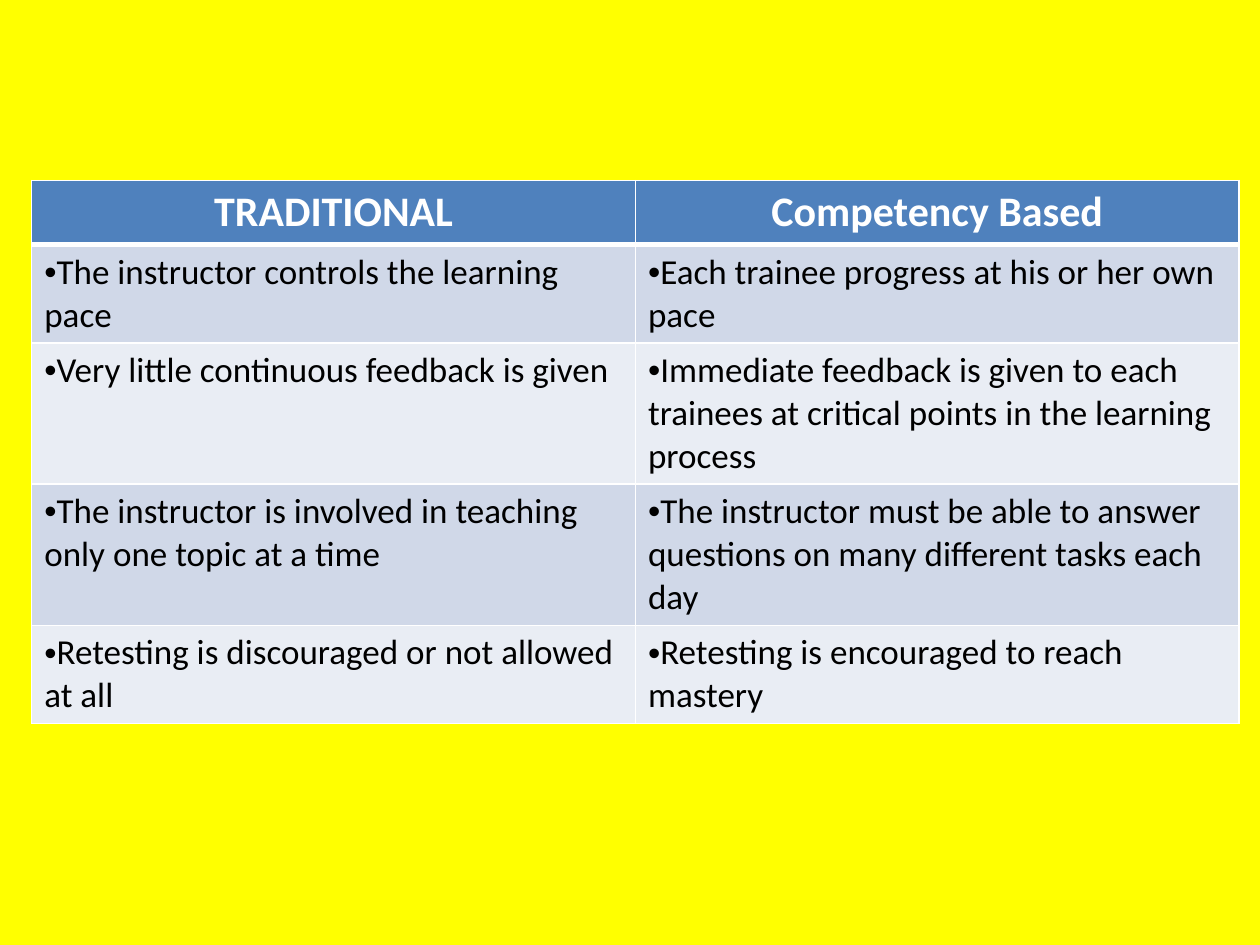
from dataclasses import dataclass

import pptx
import pptx.dml.color
import pptx.enum.text
import pptx.oxml
import pptx.oxml.ns
import pptx.util
from pptx.util import Cm


@dataclass(frozen=True)
class Theme:
    background: str = "FFFF00"
    header_fill: str = "4F81BD"
    bands: tuple[str, str] = ("D0D8E8", "E9EDF4")
    border: str = "FFFFFF"
    thin: float = 1
    thick: float = 3
    header_font = {"name": "Calibri", "size": pptx.util.Pt(24), "bold": True}
    body_font = {"name": "Calibri", "size": pptx.util.Pt(20), "bold": False}
    header_text: str = "FFFFFF"
    body_text: str = "000000"


@dataclass(frozen=True)
class Comparison:
    traditional: str
    competency: str
    height: float  # cm


THEME = Theme()
HEADINGS = Comparison("TRADITIONAL", "Competency Based", 1.26)
COMPARISONS = [
    Comparison("The instructor controls the learning pace",
               "Each trainee progress at his or her own pace", 1.98),
    Comparison("Very little continuous feedback is given",
               "Immediate feedback is given to each trainees at critical points "
               "in the learning process", 2.84),
    Comparison("The instructor is involved in teaching only one topic at a time",
               "The instructor must be able to answer questions on many different "
               "tasks each day", 2.84),
    Comparison("Retesting is discouraged or not allowed at all",
               "Retesting is encouraged to reach mastery", 1.98),
]


def rgb(value: str) -> pptx.dml.color.RGBColor:
    return pptx.dml.color.RGBColor.from_string(value)


def add_borders(cell, top: float, bottom: float) -> None:
    """Put the four border lines ahead of the fill, as the schema requires."""
    widths = {"L": THEME.thin, "R": THEME.thin, "T": top, "B": bottom}
    properties = cell._tc.get_or_add_tcPr()
    for position, (side, width) in enumerate(widths.items()):
        properties.insert(position, pptx.oxml.parse_xml(
            f'<a:ln{side} {pptx.oxml.ns.nsdecls("a")} w="{pptx.util.Pt(width)}">'
            f'<a:solidFill><a:srgbClr val="{THEME.border}"/></a:solidFill>'
            f'</a:ln{side}>'))


def add_bullet(paragraph) -> None:
    properties = paragraph._p.get_or_add_pPr()
    for name, value in {"marL": "0", "indent": "0"}.items():
        properties.set(name, value)
    for tag in ('buFont {} typeface="Arial"', 'buChar {} char="•"'):
        properties.append(pptx.oxml.parse_xml(
            f'<a:{tag.format(pptx.oxml.ns.nsdecls("a"))}/>'))


def write_cell(cell, text: str, fill: str, font: dict, color: str):
    """Fill a cell and return its paragraph."""
    cell.fill.solid()
    cell.fill.fore_color.rgb = rgb(fill)
    paragraph = cell.text_frame.paragraphs[0]
    run = paragraph.add_run()
    run.text = text
    for name, value in font.items():
        setattr(run.font, name, value)
    run.font.color.rgb = rgb(color)
    return paragraph


def draw_row(table, index: int, entry: Comparison) -> None:
    table.rows[index].height = Cm(entry.height)
    for column, text in enumerate((entry.traditional, entry.competency)):
        cell = table.cell(index, column)
        if index == 0:
            heading = write_cell(cell, text, THEME.header_fill,
                                 THEME.header_font, THEME.header_text)
            heading.alignment = pptx.enum.text.PP_ALIGN.CENTER
        else:
            add_bullet(write_cell(cell, text, THEME.bands[(index - 1) % 2],
                                  THEME.body_font, THEME.body_text))
        add_borders(cell,
                    top=THEME.thick if index == 1 else THEME.thin,
                    bottom=THEME.thick if index == 0 else THEME.thin)


def main() -> None:
    presentation = pptx.Presentation()
    presentation.slide_width, presentation.slide_height = Cm(25.4), Cm(19.05)
    slide = presentation.slides.add_slide(presentation.slide_layouts[6])

    # Background
    slide.background.fill.solid()
    slide.background.fill.fore_color.rgb = rgb(THEME.background)

    # Comparison table
    entries = [HEADINGS, *COMPARISONS]
    height = Cm(sum(entry.height for entry in entries))
    table = slide.shapes.add_table(len(entries), 2, Cm(0.64), Cm(3.64),
                                   Cm(24.34), height).table
    for index, entry in enumerate(entries):
        draw_row(table, index, entry)

    presentation.save("out.pptx")


if __name__ == "__main__":
    main()
